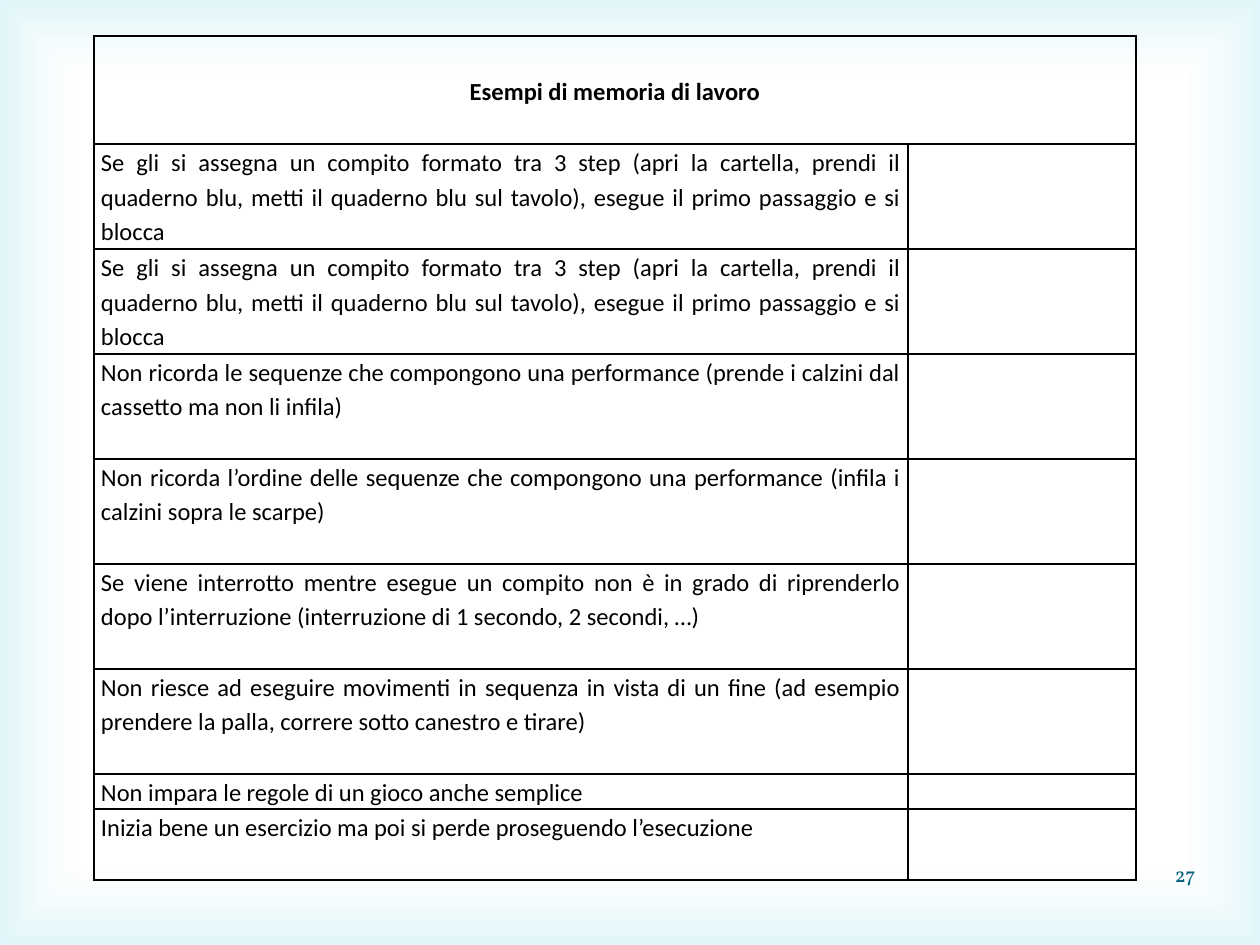
"""Build the slide listing examples of working memory difficulties."""
import pptx
import pptx.dml.color
import pptx.enum.shapes
import pptx.enum.text
import pptx.oxml
import pptx.oxml.ns
import pptx.util

SCALE = 914400 / 126
COLORS = {"text": "000000", "number": "04617B", "center": "FFFFFF", "edge": "77D9E8"}
NS = pptx.oxml.ns.nsdecls("a")
ALIGN = pptx.enum.text.PP_ALIGN
ANCHOR = pptx.enum.text.MSO_ANCHOR


def px(length):
    return pptx.util.Emu(round(length * SCALE))


def write(paragraph, text, alignment, color, **font_format):
    paragraph.alignment = alignment
    run = paragraph.add_run()
    run.text = text
    run.font.color.rgb = pptx.dml.color.RGBColor.from_string(COLORS[color])
    for name, value in font_format.items():
        setattr(run.font, name, value)


heading = "Esempi di memoria di lavoro"
three_steps = (
    "Se gli si assegna un compito formato tra 3 step (apri la cartella, prendi il quaderno blu, "
    "metti il quaderno blu sul tavolo), esegue il primo passaggio e si blocca"
)
examples = [
    three_steps,
    three_steps,
    "Non ricorda le sequenze che compongono una performance "
    "(prende i calzini dal cassetto ma non li infila)",
    "Non ricorda l’ordine delle sequenze che compongono una performance "
    "(infila i calzini sopra le scarpe)",
    "Se viene interrotto mentre esegue un compito non è in grado di riprenderlo "
    "dopo l’interruzione (interruzione di 1 secondo, 2 secondi, …)",
    "Non riesce ad eseguire movimenti in sequenza in vista di un fine "
    "(ad esempio prendere la palla, correre sotto canestro e tirare)",
    "Non impara le regole di un gioco anche semplice",
    "Inizia bene un esercizio ma poi si perde proseguendo l’esecuzione",
]
column_widths = [814, 228]
row_heights = [108] + [105] * 6 + [35, 71]

deck = pptx.Presentation()
deck.slide_width, deck.slide_height = px(1260), px(945)
slide = deck.slides.add_slide(deck.slide_layouts[6])

glow = slide.shapes.add_shape(
    pptx.enum.shapes.MSO_SHAPE.RECTANGLE, 0, 0, deck.slide_width, deck.slide_height
)
glow.shadow.inherit = False
glow.line.fill.background()
glow.fill.background()
no_fill = glow.element.spPr.find(pptx.oxml.ns.qn("a:noFill"))
stops = "".join(
    f'<a:gs pos="{position}000"><a:srgbClr val="{COLORS[color]}">'
    f'<a:alpha val="{alpha}000"/></a:srgbClr></a:gs>'
    for position, color, alpha in [(83, "center", 11), (100, "edge", 23)]
)
gradient = pptx.oxml.parse_xml(
    f'<a:gradFill {NS} rotWithShape="1"><a:gsLst>{stops}</a:gsLst><a:path path="rect">'
    '<a:fillToRect l="50000" t="50000" r="50000" b="50000"/></a:path></a:gradFill>'
)
glow.element.spPr.replace(no_fill, gradient)

page_number = slide.shapes.add_textbox(px(915), px(849), px(293), px(50)).text_frame
page_number.word_wrap = True
page_number.vertical_anchor = ANCHOR.MIDDLE
write(page_number.paragraphs[0], "27", ALIGN.RIGHT, "number",
      name="Vollkorn", size=pptx.util.Pt(12))

checklist = slide.shapes.add_table(
    len(row_heights), len(column_widths), px(94), px(36),
    px(sum(column_widths)), px(sum(row_heights)),
).table
checklist.first_row = checklist.horz_banding = False
for column, width in zip(checklist.columns, column_widths):
    column.width = px(width)
for row, height in zip(checklist.rows, row_heights):
    row.height = px(height)

cell_format = {"margin_left": px(7), "margin_right": px(7), "margin_top": 0, "margin_bottom": 0}
for cell in checklist.iter_cells():
    for name, value in cell_format.items():
        setattr(cell, name, value)
    cell.fill.background()
    for index, side in enumerate("LRTB"):
        border = pptx.oxml.parse_xml(
            f'<a:ln{side} {NS} w="12700"><a:solidFill><a:srgbClr val="{COLORS["text"]}"/>'
            f"</a:solidFill></a:ln{side}>"
        )
        cell._tc.tcPr.insert(index, border)
    paragraph = cell.text_frame.paragraphs[0]
    paragraph.line_spacing = 1.15
    paragraph._p.get_or_add_endParaRPr().set("sz", "1400")

header = checklist.cell(0, 0)
header.merge(checklist.cell(0, 1))
header.vertical_anchor = ANCHOR.MIDDLE
body_font = {"name": "Calibri", "size": pptx.util.Pt(14)}
write(header.text_frame.paragraphs[0], heading, ALIGN.CENTER, "text", bold=True, **body_font)
for row_index, example in enumerate(examples, start=1):
    paragraph = checklist.cell(row_index, 0).text_frame.paragraphs[0]
    write(paragraph, example, ALIGN.JUSTIFY, "text", bold=False, **body_font)

deck.save("out.pptx")
